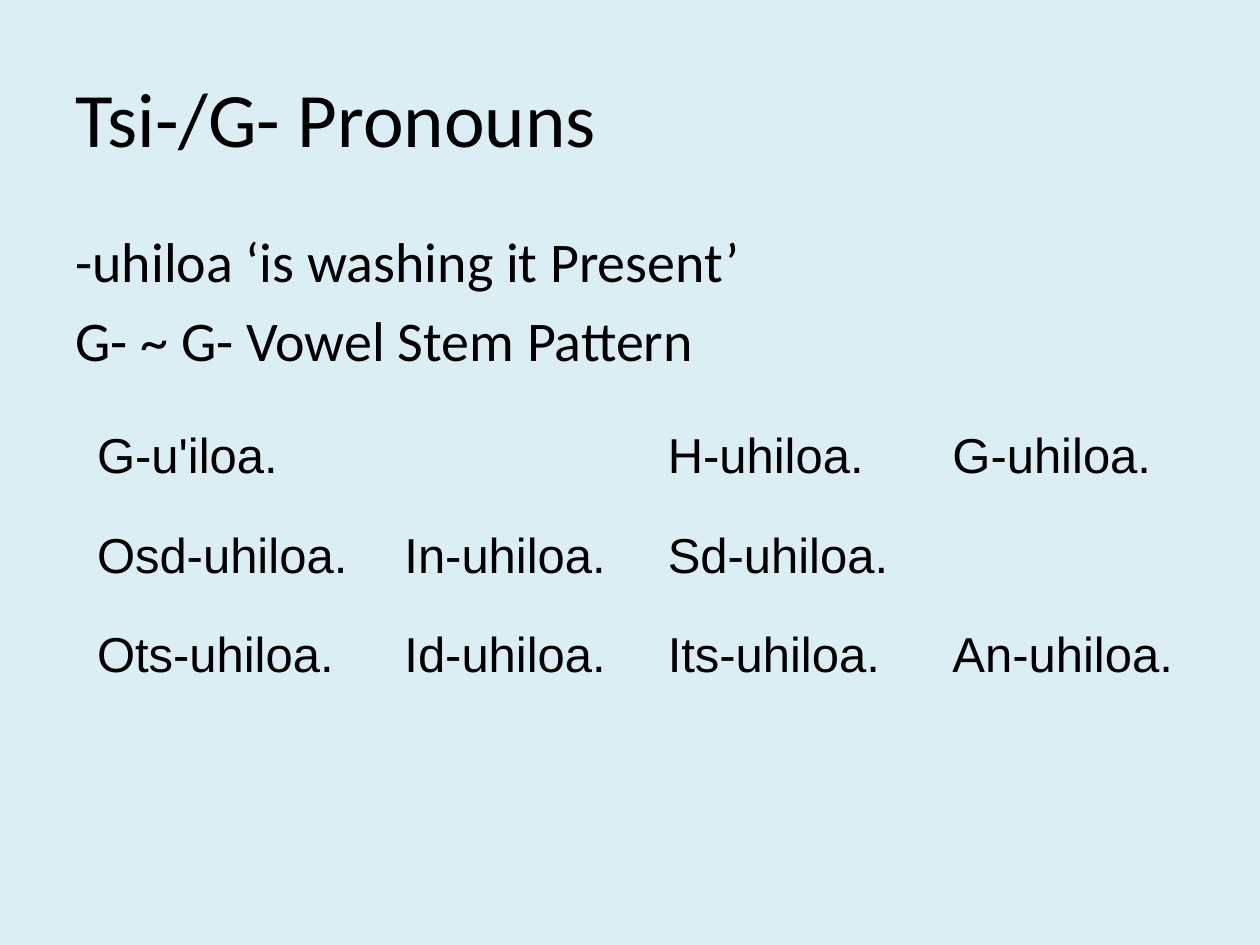
from lxml.etree import SubElement
from pptx import Presentation
from pptx.dml.color import RGBColor
from pptx.enum.text import MSO_ANCHOR, PP_ALIGN
from pptx.oxml.ns import qn
from pptx.util import Inches, Pt

# Content
TITLE = "Tsi-/G- Pronouns"
STEM_NOTES = ["-uhiloa ‘is washing it Present’", "G- ~ G- Vowel Stem Pattern"]
VERB_FORMS = [
    ["G-u'iloa.", "", "H-uhiloa.", "G-uhiloa."],
    ["Osd-uhiloa.", "In-uhiloa.", "Sd-uhiloa.", ""],
    ["Ots-uhiloa.", "Id-uhiloa.", "Its-uhiloa.", "An-uhiloa."],
]
COLUMN_WIDTHS = [2.44, 2.09, 2.26, 2.26]
ROW_HEIGHT = 0.79
BACKGROUND, INK = "DBEEF4", "000000"


def color(hex_value):
    return RGBColor.from_string(hex_value)


def write(frame, *lines, size, font="Calibri", ink=INK, gap=0,
          anchor=MSO_ANCHOR.TOP):
    frame.word_wrap = True
    frame.vertical_anchor = anchor
    for i, line in enumerate(lines):
        paragraph = frame.add_paragraph() if i else frame.paragraphs[0]
        paragraph.alignment = PP_ALIGN.LEFT
        paragraph.space_before = Pt(gap if i else 0)
        run = paragraph.add_run()
        run.text = line
        run.font.size = Pt(size)
        run.font.name = font
        run.font.color.rgb = color(ink)


def clear_cell(cell):
    properties = cell._tc.get_or_add_tcPr()
    for side in ("a:lnL", "a:lnR", "a:lnT", "a:lnB"):
        SubElement(SubElement(properties, qn(side), w="0"), qn("a:noFill"))
    cell.fill.background()


# Slide
deck = Presentation()
deck.slide_width, deck.slide_height = Inches(10), Inches(7.5)
slide = deck.slides.add_slide(deck.slide_layouts[5])
slide.background.fill.solid()
slide.background.fill.fore_color.rgb = color(BACKGROUND)

# Title
title = slide.shapes.title
title.left, title.top = Inches(0.5), Inches(0.3)
title.width, title.height = Inches(9), Inches(1.25)
write(title.text_frame, TITLE, size=44, anchor=MSO_ANCHOR.MIDDLE)

# Stem and pattern
notes = slide.shapes.add_textbox(Inches(0.5), Inches(1.75), Inches(9), Inches(4.95))
write(notes.text_frame, *STEM_NOTES, size=32, gap=6.4)

# Verb forms
forms = slide.shapes.add_table(
    len(VERB_FORMS), len(COLUMN_WIDTHS), Inches(0.67), Inches(3.36),
    Inches(sum(COLUMN_WIDTHS)), Inches(ROW_HEIGHT * len(VERB_FORMS))).table
forms.first_row = forms.horz_banding = False
for column, width in zip(forms.columns, COLUMN_WIDTHS):
    column.width = Inches(width)
for r, row in enumerate(VERB_FORMS):
    forms.rows[r].height = Inches(ROW_HEIGHT)
    for c, form in enumerate(row):
        cell = forms.cell(r, c)
        clear_cell(cell)
        if form:
            write(cell.text_frame, form, size=28, font="Arial")

deck.save("out.pptx")
